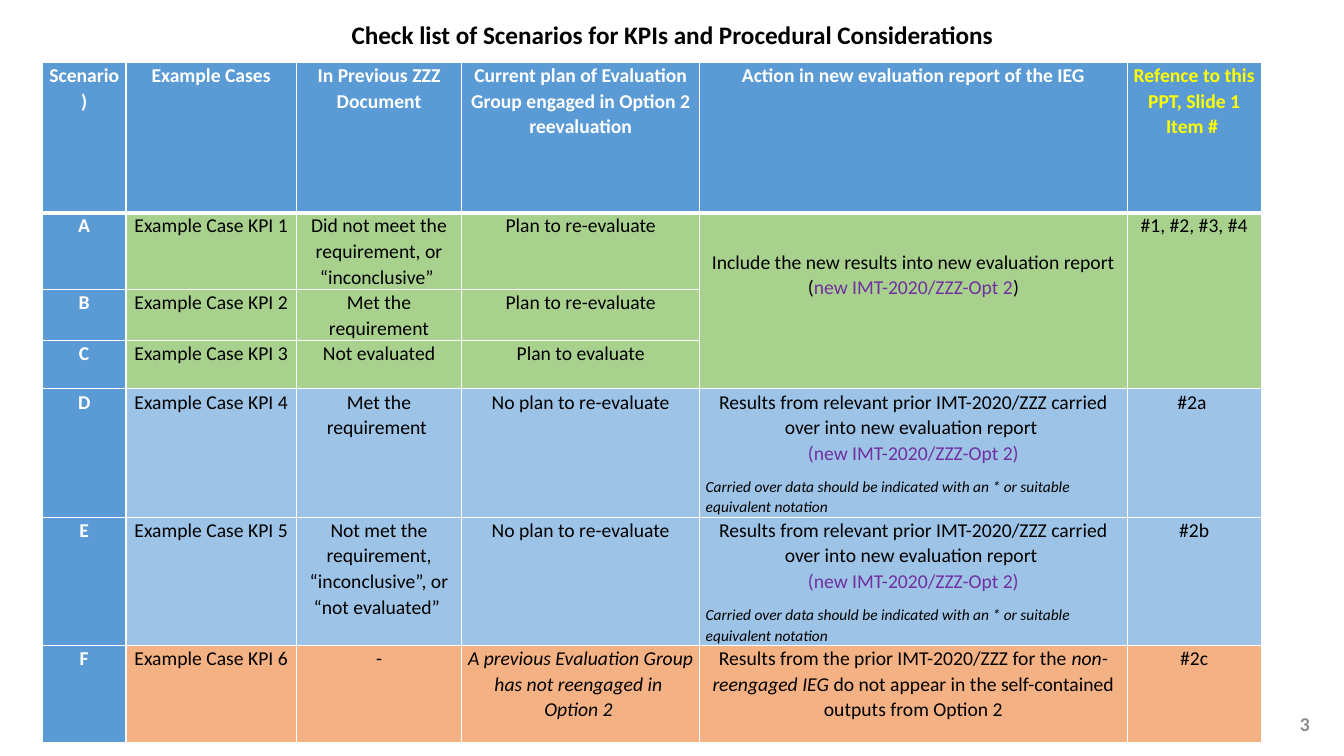
from collections import namedtuple
from dataclasses import dataclass

from lxml import etree
from pptx import Presentation
from pptx.dml.color import RGBColor
from pptx.enum.text import MSO_ANCHOR, MSO_AUTO_SIZE, PP_ALIGN
from pptx.oxml.ns import qn
from pptx.util import Inches, Pt

CENTER, LEFT, RIGHT = PP_ALIGN.CENTER, PP_ALIGN.LEFT, PP_ALIGN.RIGHT
TOP, MIDDLE = MSO_ANCHOR.TOP, MSO_ANCHOR.MIDDLE
TITLE_ONLY = 5

Span = namedtuple("Span", "text color size bold italic", defaults=(None, None, None, None))
Line = namedtuple("Line", "spans after align", defaults=(8, CENTER))


@dataclass(frozen=True)
class Theme:
    font: str = "Calibri"
    title: int = 18
    body: int = 14
    note: int = 11
    black: str = "000000"
    white: str = "FFFFFF"
    yellow: str = "FFFF00"
    purple: str = "7030A0"
    gray: str = "8C8C8C"
    header: str = "5B9BD5"
    green: str = "A9D18E"
    blue: str = "9DC3E6"
    orange: str = "F4B183"


THEME = Theme()

TITLE = "Check list of Scenarios for KPIs and Procedural Considerations"
PAGE_NUMBER = "3"

REFERENCE_HEADER = [
    Line([Span("Refence to this ", THEME.yellow)], 0),
    Line([Span("PPT, Slide 1 Item # ", THEME.yellow)]),
]
NEW_RESULTS = [Line([
    Span("Include the new results into new evaluation report ("),
    Span("new IMT-2020/ZZZ-Opt 2", THEME.purple),
    Span(")"),
])]
CARRIED_OVER = [
    Line([Span("Results from relevant prior IMT-2020/ZZZ carried over into new evaluation report ")], 0),
    Line([Span("(new IMT-2020/ZZZ-Opt 2)", THEME.purple)]),
    Line([Span("Carried over data should be indicated with an * or suitable equivalent notation",
               size=THEME.note, italic=True)], align=LEFT),
]
NOT_MET = [
    Line([Span("Not met the requirement, “inconclusive”, or")], 0),
    Line([Span("“not evaluated” ")], 0),
]
NOT_REENGAGED = [
    Line([Span("A previous Evaluation Group has not reengaged in ", italic=True)], 0),
    Line([Span("Option 2 ", italic=True)]),
]
LEFT_OUT = [Line([
    Span("Results from the prior IMT-2020/ZZZ for the "),
    Span("non-reengaged IEG ", italic=True),
    Span("do not appear in the self-contained outputs from Option 2"),
])]

ROWS = [
    ("Scenario)", "Example Cases", "In Previous ZZZ Document",
     "Current plan of Evaluation Group engaged in Option 2 reevaluation",
     "Action in new evaluation report of the IEG", REFERENCE_HEADER),
    ("A", "Example Case KPI 1", "Did not meet the requirement, or “inconclusive” ",
     "Plan to re-evaluate", NEW_RESULTS, "#1, #2, #3, #4"),
    ("B", "Example Case KPI 2", "Met the requirement", "Plan to re-evaluate", None, None),
    ("C", "Example Case KPI 3", "Not evaluated", "Plan to evaluate", None, None),
    ("D", "Example Case KPI 4", "Met the requirement ", "No plan to re-evaluate",
     CARRIED_OVER, "#2a "),
    ("E", "Example Case KPI 5", NOT_MET, "No plan to re-evaluate", CARRIED_OVER, "#2b"),
    ("F", "Example Case KPI 6", "-", NOT_REENGAGED, LEFT_OUT, "#2c"),
]
ROW_FILLS = [THEME.header] + [THEME.green] * 3 + [THEME.blue] * 2 + [THEME.orange]
COLUMN_WIDTHS = [0.83, 1.69, 1.64, 2.36, 4.24, 1.33]
ROW_HEIGHTS = [1.49, 0.75, 0.5, 0.48, 1.27, 1.27, 0.96]
MERGED_COLUMNS = (4, 5)
MERGED_ROWS = (1, 3)
SIDE_INSET = 0.06
LOWERED_INSET = 0.36


def add_span(para, span, color, size, bold):
    run = para.add_run()
    run.text = span.text
    run.font.name = THEME.font
    run.font.size = Pt(span.size or size)
    run.font.bold = bold
    run.font.italic = bool(span.italic)
    run.font.color.rgb = RGBColor.from_string(span.color or color)


def write_lines(frame, content, color, size, bold=False, align=None):
    lines = [Line([Span(content)])] if isinstance(content, str) else content
    for index, line in enumerate(lines):
        para = frame.paragraphs[0] if index == 0 else frame.add_paragraph()
        para.alignment = align or line.align
        for span in line.spans:
            add_span(para, span, color, size, bold)
        yield para, line


def set_borders(cell, is_header):
    properties = cell._tc.get_or_add_tcPr()
    widths = {"lnL": 1, "lnR": 1, "lnT": 1, "lnB": 3 if is_header else 1}
    for position, (side, width) in enumerate(widths.items()):
        edge = etree.Element(qn("a:" + side), w=str(Pt(width)))
        fill = etree.SubElement(edge, qn("a:solidFill"))
        etree.SubElement(fill, qn("a:srgbClr"), val=THEME.white)
        properties.insert(position, edge)


def format_cell(cell, content, row, column):
    heading = row == 0 or column == 0
    cell.margin_left = cell.margin_right = Inches(SIDE_INSET)
    cell.margin_top = Inches(LOWERED_INSET if content is NEW_RESULTS else 0)
    cell.margin_bottom = 0
    cell.vertical_anchor = TOP
    cell.fill.solid()
    cell.fill.fore_color.rgb = RGBColor.from_string(THEME.header if heading else ROW_FILLS[row])
    set_borders(cell, row == 0)
    if content:
        color = THEME.white if heading else THEME.black
        for para, line in write_lines(cell.text_frame, content, color, THEME.body, heading):
            para.line_spacing = 1.07
            para.space_after = Pt(line.after)


def add_checklist(page):
    frame = page.shapes.add_table(
        len(ROWS), len(COLUMN_WIDTHS), Inches(0.42), Inches(0.62),
        Inches(sum(COLUMN_WIDTHS)), Inches(sum(ROW_HEIGHTS)))
    table = frame.table
    table.horz_banding = False
    for column, width in zip(table.columns, COLUMN_WIDTHS):
        column.width = Inches(width)
    for row, height in zip(table.rows, ROW_HEIGHTS):
        row.height = Inches(height)
    for column in MERGED_COLUMNS:
        first, last = MERGED_ROWS
        table.cell(first, column).merge(table.cell(last, column))
    for row, contents in enumerate(ROWS):
        for column, content in enumerate(contents):
            format_cell(table.cell(row, column), content, row, column)


def place_label(box, area, text, color, size, align, anchor, wrap):
    box.left, box.top, box.width, box.height = map(Inches, area)
    frame = box.text_frame
    frame.auto_size = MSO_AUTO_SIZE.NONE
    frame.word_wrap = wrap
    frame.vertical_anchor = anchor
    list(write_lines(frame, text, color, size, True, align))


def main():
    deck = Presentation()
    deck.slide_width, deck.slide_height = Inches(13.33), Inches(7.5)
    page = deck.slides.add_slide(deck.slide_layouts[TITLE_ONLY])
    add_checklist(page)
    place_label(page.shapes.title, (3.36, 0.14, 6.62, 0.4), TITLE,
                THEME.black, THEME.title, CENTER, TOP, False)
    place_label(page.shapes.add_textbox(0, 0, 0, 0), (10.09, 6.98, 3, 0.4), PAGE_NUMBER,
                THEME.gray, THEME.body, RIGHT, MIDDLE, True)
    deck.save("out.pptx")


if __name__ == "__main__":
    main()
